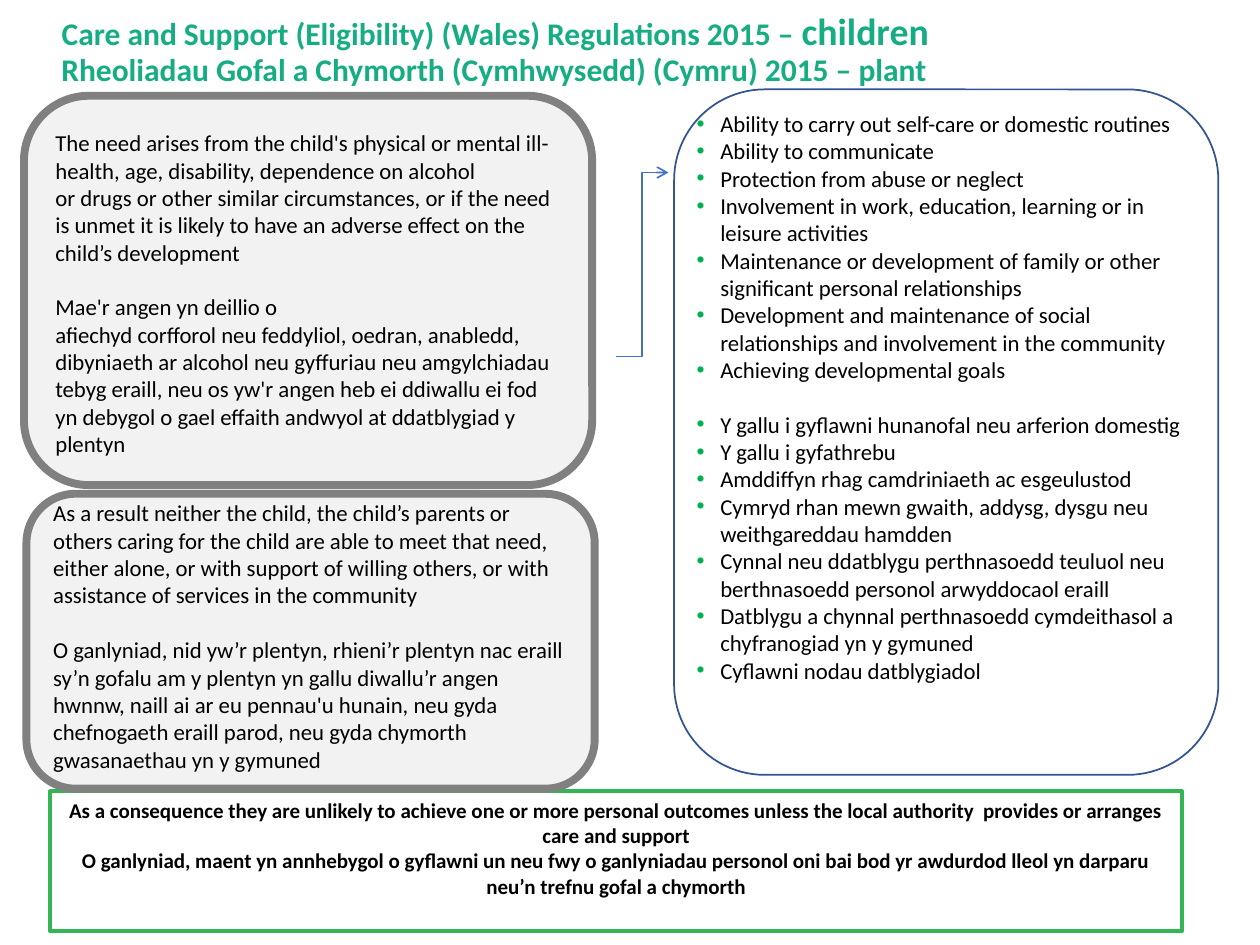
from dataclasses import dataclass

from lxml import etree
from pptx import Presentation
from pptx.dml.color import RGBColor
from pptx.enum.shapes import MSO_CONNECTOR, MSO_SHAPE
from pptx.enum.text import MSO_ANCHOR, PP_ALIGN
from pptx.oxml.ns import qn
from pptx.util import Pt

ROUNDED = MSO_SHAPE.ROUNDED_RECTANGLE
RECTANGLE = MSO_SHAPE.RECTANGLE
ELBOW = MSO_CONNECTOR.ELBOW
TOP, MIDDLE = MSO_ANCHOR.TOP, MSO_ANCHOR.MIDDLE
LEFT, CENTER = PP_ALIGN.LEFT, PP_ALIGN.CENTER


@dataclass(frozen=True)
class Theme:
    """Colours and type sizes of the slide."""
    font: str = "Calibri"
    heading: str = "16AD85"
    text: str = "000000"
    card_fill: str = "F2F2F2"
    card_line: str = "808080"
    panel_line: str = "325491"
    arrow: str = "4472C4"
    bullet: str = "00B050"
    footer_line: str = "34B555"
    heading_size: float = 18
    emphasis_size: float = 21.6
    body_size: float = 13
    footer_size: float = 12
    language_gap: float = 15.7


THEME = Theme()

TITLE = ("Care and Support (Eligibility) (Wales) Regulations 2015 – ", "children")
SUBTITLE = "Rheoliadau Gofal a Chymorth (Cymhwysedd) (Cymru) 2015 – plant"
NEED = [
    "The need arises from the child's physical or mental ill-health, age, disability, "
    "dependence on alcohol \nor drugs or other similar circumstances, or if the need is unmet "
    "it is likely to have an adverse effect on the child’s development",
    "Mae'r angen yn deillio o \nafiechyd corfforol neu feddyliol, oedran, anabledd, dibyniaeth "
    "ar alcohol neu gyffuriau neu amgylchiadau tebyg eraill, neu os yw'r angen heb ei ddiwallu "
    "ei fod yn debygol o gael effaith andwyol at ddatblygiad y plentyn",
]
RESULT = [
    "As a result neither the child, the child’s parents or others caring for the child are able "
    "to meet that need, either alone, or with support of willing others, or with assistance of "
    "services in the community",
    "O ganlyniad, nid yw’r plentyn, rhieni’r plentyn nac eraill sy’n gofalu am y plentyn yn gallu "
    "diwallu’r angen hwnnw, naill ai ar eu pennau'u hunain, neu gyda chefnogaeth eraill parod, "
    "neu gyda chymorth \ngwasanaethau yn y gymuned",
]
OUTCOMES_ENGLISH = [
    "Ability to carry out self-care or domestic routines",
    "Ability to communicate",
    "Protection from abuse or neglect",
    "Involvement in work, education, learning or in leisure activities",
    "Maintenance or development of family or other significant personal relationships",
    "Development and maintenance of social relationships and involvement in the community",
    "Achieving developmental goals",
]
OUTCOMES_WELSH = [
    "Y gallu i gyflawni hunanofal neu arferion domestig",
    "Y gallu i gyfathrebu",
    "Amddiffyn rhag camdriniaeth ac esgeulustod",
    "Cymryd rhan mewn gwaith, addysg, dysgu neu weithgareddau hamdden",
    "Cynnal neu ddatblygu perthnasoedd teuluol neu berthnasoedd personol arwyddocaol eraill",
    "Datblygu a chynnal perthnasoedd cymdeithasol a chyfranogiad yn y gymuned",
    "Cyflawni nodau datblygiadol",
]
CONSEQUENCE = [
    "As a consequence they are unlikely to achieve one or more personal outcomes unless the "
    "local authority  provides or arranges care and support",
    "O ganlyniad, maent yn annhebygol o gyflawni un neu fwy o ganlyniadau personol oni bai bod "
    "yr awdurdod lleol yn darparu neu’n trefnu gofal a chymorth",
]


def points(*values):
    """Turn numbers into point lengths."""
    return [Pt(value) for value in values]


def format_runs(paragraph, size, color, bold=False):
    """Give every run of a paragraph its font."""
    for run in paragraph.runs:
        run.font.name = THEME.font
        run.font.size = Pt(size)
        run.font.bold = bold
        run.font.color.rgb = RGBColor.from_string(color)


def write_paragraphs(text_frame, texts, size, color, bold=False, align=LEFT, anchor=TOP):
    """Write one formatted paragraph per text and return them."""
    text_frame.word_wrap = True
    text_frame.vertical_anchor = anchor
    for index, text in enumerate(texts):
        paragraph = text_frame.add_paragraph() if index else text_frame.paragraphs[0]
        paragraph.text = text
        paragraph.alignment = align
        format_runs(paragraph, size, color, bold)
    return text_frame.paragraphs


def add_outline(slide, kind, box, line, width, fill=None):
    """Draw a preset shape with an outline and an optional fill."""
    shape = slide.shapes.add_shape(kind, *points(*box))
    shape.shadow.inherit = False
    shape.line.color.rgb = RGBColor.from_string(line)
    shape.line.width = Pt(width)
    if fill:
        shape.fill.solid()
        shape.fill.fore_color.rgb = RGBColor.from_string(fill)
    else:
        shape.fill.background()
    return shape


def add_bullet(paragraph, indent):
    """Give a paragraph a coloured bullet and a hanging indent."""
    properties = paragraph._p.get_or_add_pPr()
    properties.set("marL", str(Pt(indent)))
    properties.set("indent", str(-Pt(indent)))
    color = etree.SubElement(properties, qn("a:buClr"))
    etree.SubElement(color, qn("a:srgbClr"), val=THEME.bullet)
    etree.SubElement(properties, qn("a:buFont"), typeface="Arial")
    etree.SubElement(properties, qn("a:buChar"), char="•")


def place_title(slide, box):
    """Place the English title with its last word enlarged."""
    title = slide.shapes.title
    title.left, title.top, title.width, title.height = points(*box)
    paragraph = write_paragraphs(title.text_frame, [TITLE[0]], THEME.heading_size,
                                 THEME.heading, bold=True, anchor=MIDDLE)[0]
    paragraph.line_spacing = 0.9
    paragraph.add_run().text = TITLE[1]
    format_runs(paragraph, THEME.heading_size, THEME.heading, bold=True)
    paragraph.runs[-1].font.size = Pt(THEME.emphasis_size)


def place_subtitle(slide, box):
    """Place the Welsh title."""
    text_box = slide.shapes.add_textbox(*points(*box))
    write_paragraphs(text_box.text_frame, [SUBTITLE], THEME.heading_size, THEME.heading, bold=True)


def place_card(slide, box, texts, top_margin, bottom_margin):
    """Place a grey card with an English and a Welsh paragraph."""
    card = add_outline(slide, ROUNDED, box, THEME.card_line, 4.5, THEME.card_fill)
    card.text_frame.margin_top, card.text_frame.margin_bottom = points(top_margin, bottom_margin)
    paragraphs = write_paragraphs(card.text_frame, texts, THEME.body_size, THEME.text,
                                  anchor=MIDDLE)
    paragraphs[1].space_before = Pt(THEME.language_gap)


def place_outcomes(slide, box):
    """Place the outlined panel with the outcomes in both languages."""
    left, top, width, height = box
    add_outline(slide, ROUNDED, box, THEME.panel_line, 1)
    text_box = slide.shapes.add_textbox(*points(left + 5.8, top + 8, width - 5, height - 39))
    paragraphs = write_paragraphs(text_box.text_frame, OUTCOMES_ENGLISH + OUTCOMES_WELSH,
                                  THEME.body_size, THEME.text)
    paragraphs[len(OUTCOMES_ENGLISH)].space_before = Pt(THEME.language_gap)
    for paragraph in paragraphs:
        add_bullet(paragraph, 13.5)


def place_arrow(slide, start, end):
    """Join the cards to the outcomes with an elbow arrow."""
    connector = slide.shapes.add_connector(ELBOW, *points(*start, *end))
    connector.line.color.rgb = RGBColor.from_string(THEME.arrow)
    connector.line.width = Pt(1)
    etree.SubElement(connector.line._get_or_add_ln(), qn("a:tailEnd"), type="arrow")
    etree.SubElement(connector._element.spPr, qn("a:effectLst"))


def place_consequence(slide, box):
    """Place the green box with the consequence."""
    footer = add_outline(slide, RECTANGLE, box, THEME.footer_line, 2.25)
    write_paragraphs(footer.text_frame, CONSEQUENCE, THEME.footer_size, THEME.text,
                     bold=True, align=CENTER)


def main():
    """Build the slide and save it."""
    presentation = Presentation()
    presentation.slide_width, presentation.slide_height = points(720, 540)
    slide = presentation.slides.add_slide(presentation.slide_layouts[5])
    place_title(slide, (28, 3, 620, 32.4))
    place_card(slide, (13.7, 54.7, 324.7, 222.5), NEED, 6.6, 3.6)
    place_outcomes(slide, (385.2, 51.1, 311, 391.7))
    place_arrow(slide, (352.1, 203.8), (382, 98.6))
    place_consequence(slide, (28.8, 452.2, 646.6, 80))
    place_card(slide, (15.1, 282.2, 324.7, 168.5), RESULT, 3.6, 9.6)
    place_subtitle(slide, (28, 25.2, 612, 28.8))
    presentation.save("out.pptx")


if __name__ == "__main__":
    main()
